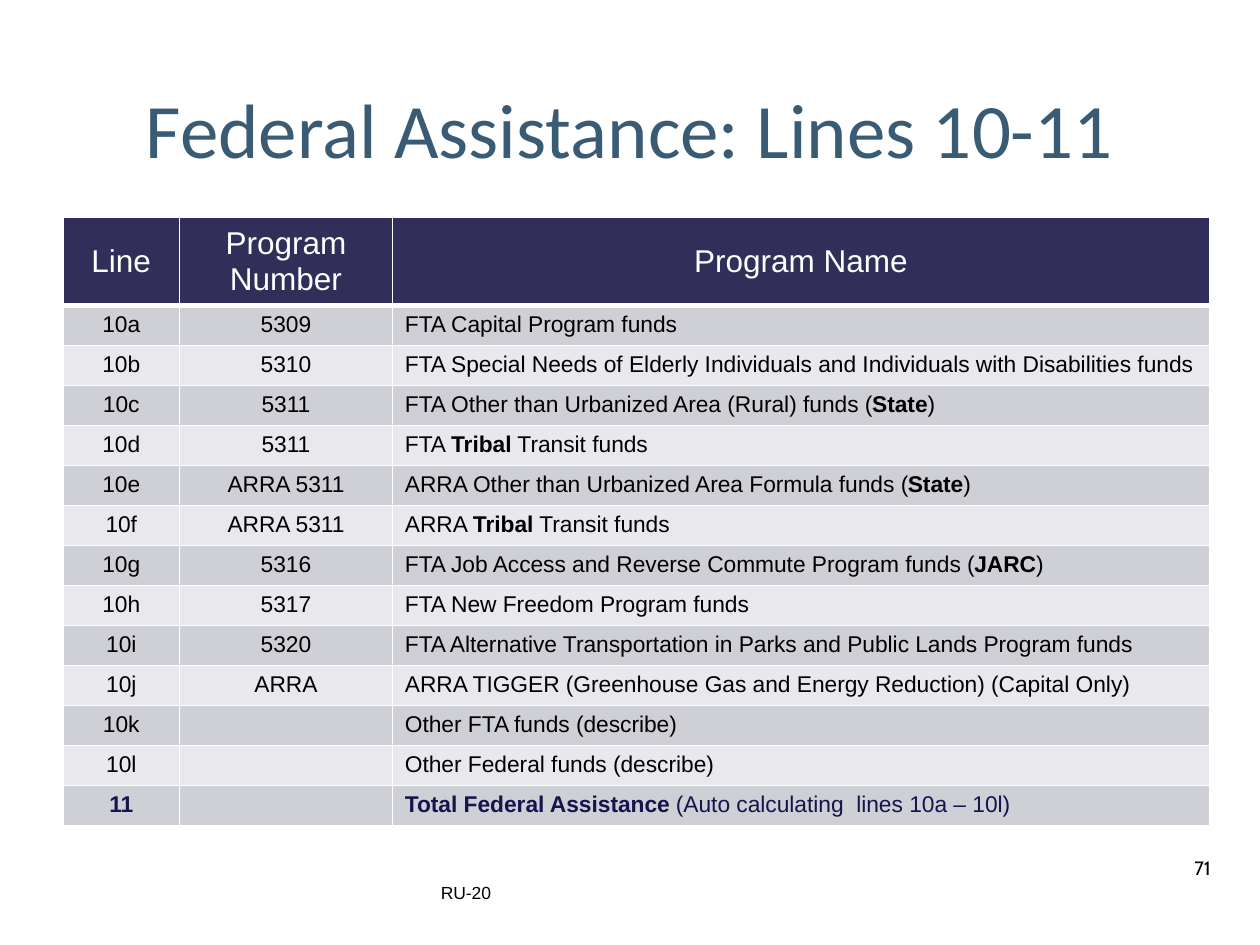
from lxml import etree
from pptx import Presentation
from pptx.dml.color import RGBColor
from pptx.enum.text import MSO_ANCHOR, PP_ALIGN
from pptx.oxml.ns import qn
from pptx.util import Inches, Pt

CENTER, LEFT = PP_ALIGN.CENTER, PP_ALIGN.LEFT
TOP, MIDDLE = MSO_ANCHOR.TOP, MSO_ANCHOR.MIDDLE

SLIDE_WIDTH, SLIDE_HEIGHT = Inches(10), Inches(7.5)
COLORS = {
    "title": "395B74",
    "header": "312F59",
    "odd": "CFCFD6",
    "even": "E9E8EC",
    "total": "17144D",
    "text": "000000",
    "white": "FFFFFF",
}
COLUMN_SHARES = (0.92, 1.68, 6.45)
HEADER_ROWS = 2.3
BODY_SIZE = 13
HEADERS = ("Line", "Program Number", "Program Name")
PROGRAMS = (
    ("10a", "5309", "FTA Capital Program funds"),
    ("10b", "5310", "FTA Special Needs of Elderly Individuals and Individuals with Disabilities funds"),
    ("10c", "5311", "FTA Other than Urbanized Area (Rural) funds (**State**)"),
    ("10d", "5311", "FTA **Tribal** Transit funds"),
    ("10e", "ARRA 5311", "ARRA Other than Urbanized Area Formula funds (**State**)"),
    ("10f", "ARRA 5311", "ARRA **Tribal** Transit funds"),
    ("10g", "5316", "FTA Job Access and Reverse Commute Program funds (**JARC**)"),
    ("10h", "5317", "FTA New Freedom Program funds"),
    ("10i", "5320", "FTA Alternative Transportation in Parks and Public Lands Program funds"),
    ("10j", "ARRA", "ARRA TIGGER (Greenhouse Gas and Energy Reduction) (Capital Only)"),
    ("10k", "", "Other FTA funds (describe)"),
    ("10l", "", "Other Federal funds (describe)"),
    ("**11**", "", "**Total Federal Assistance** (Auto calculating  lines 10a – 10l)"),
)


def share_box(left, top, width, height):
    """Turn shares of the slide's size into a box of lengths."""
    return (
        int(left * SLIDE_WIDTH),
        int(top * SLIDE_HEIGHT),
        int(width * SLIDE_WIDTH),
        int(height * SLIDE_HEIGHT),
    )


def write_text(paragraph, text, size, color, font="Arial", align=LEFT):
    """Write text in which double asterisks enclose bold words."""
    paragraph.alignment = align
    for index, part in enumerate(text.split("**")):
        if part:
            run = paragraph.add_run()
            run.text = part
            run.font.size = Pt(size)
            run.font.name = font
            run.font.bold = index % 2 == 1
            run.font.color.rgb = RGBColor.from_string(COLORS[color])


def add_label(slide, box, text, size, color, font, align=LEFT, anchor=TOP):
    """Place one line of text in a box."""
    text_frame = slide.shapes.add_textbox(*box).text_frame
    text_frame.word_wrap = True
    text_frame.vertical_anchor = anchor
    write_text(text_frame.paragraphs[0], text, size, color, font, align)


def set_borders(cell, bottom_width):
    """Draw white borders around a cell."""
    properties = cell._tc.get_or_add_tcPr()
    widths = {"a:lnL": 1, "a:lnR": 1, "a:lnT": 1, "a:lnB": bottom_width}
    for position, (tag, width) in enumerate(widths.items()):
        line = etree.Element(qn(tag), w=str(Pt(width)))
        fill = etree.SubElement(line, qn("a:solidFill"))
        etree.SubElement(fill, qn("a:srgbClr"), val=COLORS["white"])
        properties.insert(position, line)


def fill_cell(cell, text, size, color, fill, align, anchor=TOP, bottom_width=1):
    """Set the text, fill and borders of a cell."""
    cell.fill.solid()
    cell.fill.fore_color.rgb = RGBColor.from_string(COLORS[fill])
    cell.vertical_anchor = anchor
    set_borders(cell, bottom_width)
    paragraph = cell.text_frame.paragraphs[0]
    write_text(paragraph, text, size, color, align=align)
    if not text:
        etree.SubElement(paragraph._p, qn("a:endParaRPr"), sz=str(size * 100))


def add_program_table(slide, box):
    """Place the table of programs, one per line of the form."""
    left, top, width, height = box
    row_count = len(PROGRAMS) + 1
    table = slide.shapes.add_table(row_count, len(HEADERS), *box).table
    for column, share in zip(table.columns, COLUMN_SHARES):
        column.width = int(width * share / sum(COLUMN_SHARES))
    row_height = height / (HEADER_ROWS + len(PROGRAMS))
    for row_index, row in enumerate(table.rows):
        row.height = int(row_height * (1 if row_index else HEADER_ROWS))
    for column_index, header in enumerate(HEADERS):
        fill_cell(table.cell(0, column_index), header, 18, "white", "header", CENTER, MIDDLE, 3)
    for row_index, program in enumerate(PROGRAMS, start=1):
        fill = "odd" if row_index % 2 else "even"
        color = "total" if row_index == len(PROGRAMS) else "text"
        for column_index, text in enumerate(program):
            align = LEFT if column_index == 2 else CENTER
            fill_cell(table.cell(row_index, column_index), text, BODY_SIZE, color, fill, align)


def add_footer(slide, box):
    """Place the form name and the page number."""
    left, top, width, height = box
    label_height = int(height * 0.66)
    form_box = (left, top + height - label_height, int(width * 0.49), label_height)
    number_width = int(width * 0.08)
    number_box = (left + width - number_width, top, number_width, label_height)
    add_label(slide, form_box, "RU-20", 10, "text", "Arial")
    add_label(slide, number_box, "71", 11, "text", "Cabin")


def main():
    """Build the slide and save it."""
    presentation = Presentation()
    presentation.slide_width, presentation.slide_height = SLIDE_WIDTH, SLIDE_HEIGHT
    slide = presentation.slides.add_slide(presentation.slide_layouts[6])
    add_label(
        slide, share_box(0.05, 0.06, 0.9, 0.15), "Federal Assistance: Lines 10-11",
        44, "title", "Calibri", CENTER, MIDDLE,
    )
    add_program_table(slide, share_box(0.05, 0.23, 0.91, 0.62))
    add_footer(slide, share_box(0.34, 0.9, 0.65, 0.08))
    presentation.save("out.pptx")


if __name__ == "__main__":
    main()
